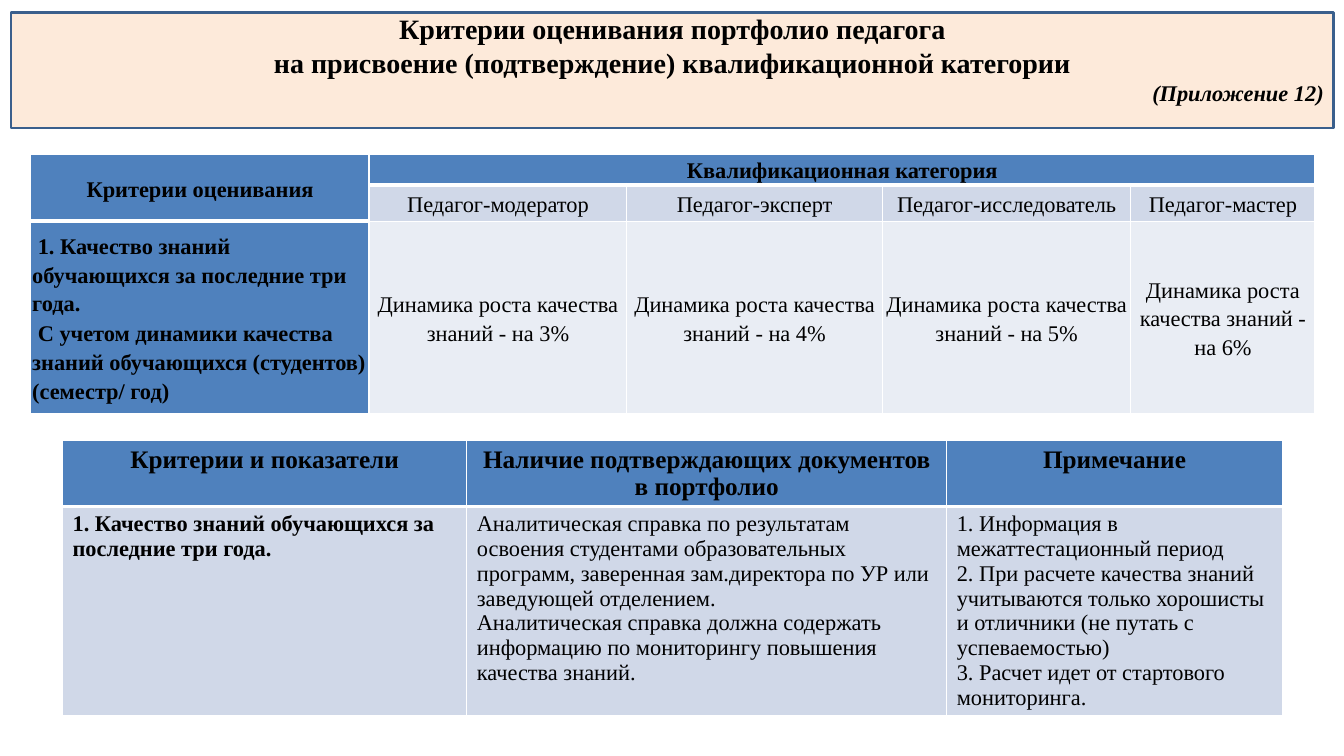
from lxml import etree
from pptx import Presentation
from pptx.dml.color import RGBColor
from pptx.enum import text
from pptx.oxml import ns
from pptx.util import Inches, Pt

COLORS = {
    "black": "000000", "white": "FFFFFF", "peach": "FDEADA", "outline": "3A5F8C",
    "header": "4F81BD", "band": "D0D8E8", "pale": "E9EDF4",
}
LEFT, CENTER, RIGHT = text.PP_ALIGN.LEFT, text.PP_ALIGN.CENTER, text.PP_ALIGN.RIGHT


def write(frame, content, size=16, bold=False, italic=False, align=LEFT, spacing=1.0, after=0):
    for line in content.split("\n"):
        paragraph = frame.paragraphs[-1]
        if paragraph.runs:
            paragraph = frame.add_paragraph()
        paragraph.alignment = align
        paragraph.line_spacing = spacing
        paragraph.space_after = Pt(after)
        run = paragraph.add_run()
        run.text = line
        run.font.name = "Times New Roman"
        run.font.size = Pt(size)
        run.font.bold = bold
        run.font.italic = italic
        run.font.color.rgb = RGBColor.from_string(COLORS["black"])


def style_cell(cell, fill, bottom=1):
    properties = cell._tc.get_or_add_tcPr()
    for side, width in (("L", 1), ("R", 1), ("T", 1), ("B", bottom)):
        border = etree.SubElement(properties, ns.qn(f"a:ln{side}"), w=str(Pt(width)))
        solid = etree.SubElement(border, ns.qn("a:solidFill"))
        etree.SubElement(solid, ns.qn("a:srgbClr"), val=COLORS["white"])
    cell.fill.solid()
    cell.fill.fore_color.rgb = RGBColor.from_string(COLORS[fill])


presentation = Presentation()
presentation.slide_width = Inches(13.33)
presentation.slide_height = Inches(7.5)
slide = presentation.slides.add_slide(presentation.slide_layouts[5])

title = slide.shapes.title
title.left, title.top = Inches(0.11), Inches(0.12)
title.width, title.height = Inches(13.12), Inches(1.15)
geometry = etree.SubElement(title._element.spPr, ns.qn("a:prstGeom"), prst="roundRect")
etree.SubElement(geometry, ns.qn("a:avLst"))
title.fill.solid()
title.fill.fore_color.rgb = RGBColor.from_string(COLORS["peach"])
title.line.color.rgb = RGBColor.from_string(COLORS["outline"])
title.line.width = Pt(2)
frame = title.text_frame
frame.auto_size = text.MSO_AUTO_SIZE.NONE
frame.word_wrap = True
frame.vertical_anchor = text.MSO_ANCHOR.MIDDLE
frame.margin_top, frame.margin_bottom = 0, Inches(0.22)
write(frame, "Критерии оценивания портфолио педагога\n"
      "на присвоение (подтверждение) квалификационной категории",
      size=20, bold=True, align=CENTER)
write(frame, "(Приложение 12)", bold=True, italic=True, align=RIGHT)

growth = "Динамика роста качества знаний - на {}%"
category_rows = [
    ["Критерии оценивания", "Квалификационная категория", "", "", ""],
    ["", "Педагог-модератор", "Педагог-эксперт", "Педагог-исследователь", "Педагог-мастер"],
    [" 1. Качество знаний обучающихся за последние три года.\n"
     " С учетом динамики качества знаний обучающихся (студентов) (семестр/ год)"]
    + [growth.format(percent) for percent in range(3, 7)],
]
categories = slide.shapes.add_table(
    3, 5, Inches(0.3), Inches(1.53), Inches(12.74), Inches(2.57)).table
for column, width in zip(categories.columns, (3.36, 2.55, 2.54, 2.46, 1.83)):
    column.width = Inches(width)
for row, height in zip(categories.rows, (0.25, 0.36, 1.91)):
    row.height = Inches(height)
categories.cell(0, 0).merge(categories.cell(1, 0))
categories.cell(0, 1).merge(categories.cell(0, 4))
for r, contents in enumerate(category_rows):
    for c, content in enumerate(contents):
        cell = categories.cell(r, c)
        heading = r == 0 or c == 0
        fill = "header" if heading else ("band" if r == 1 else "pale")
        style_cell(cell, fill, bottom=3 if heading and r < 2 else 1)
        cell.vertical_anchor = text.MSO_ANCHOR.MIDDLE
        cell.margin_left = Inches(0.02)
        cell.margin_right = cell.margin_top = cell.margin_bottom = Inches(0.01)
        if content:
            write(cell.text_frame, content, bold=heading,
                  align=LEFT if r == 2 and c == 0 else CENTER, spacing=1.15, after=1)

document_rows = [
    ["Критерии и показатели", "Наличие подтверждающих документов в портфолио", "Примечание"],
    ["1. Качество знаний обучающихся за последние три года.",
     "Аналитическая справка по результатам освоения студентами образовательных программ, "
     "заверенная зам.директора по УР или заведующей отделением.\n"
     "Аналитическая справка должна содержать информацию по мониторингу повышения качества знаний.",
     "1. Информация в межаттестационный период\n"
     "2. При расчете качества знаний учитываются только хорошисты и отличники "
     "(не путать с успеваемостью)\n"
     "3. Расчет идет от стартового мониторинга."],
]
documents = slide.shapes.add_table(
    2, 3, Inches(0.62), Inches(4.37), Inches(12.1), Inches(2.72)).table
for column, width in zip(documents.columns, (4.01, 4.76, 3.33)):
    column.width = Inches(width)
for row, height in zip(documents.rows, (0.64, 2.08)):
    row.height = Inches(height)
for r, contents in enumerate(document_rows):
    for c, content in enumerate(contents):
        cell = documents.cell(r, c)
        heading = r == 0
        style_cell(cell, "header" if heading else "band", bottom=3 if heading else 1)
        write(cell.text_frame, content, size=18 if heading else 16,
              bold=heading or c == 0, align=CENTER if heading else LEFT)

presentation.save("out.pptx")
